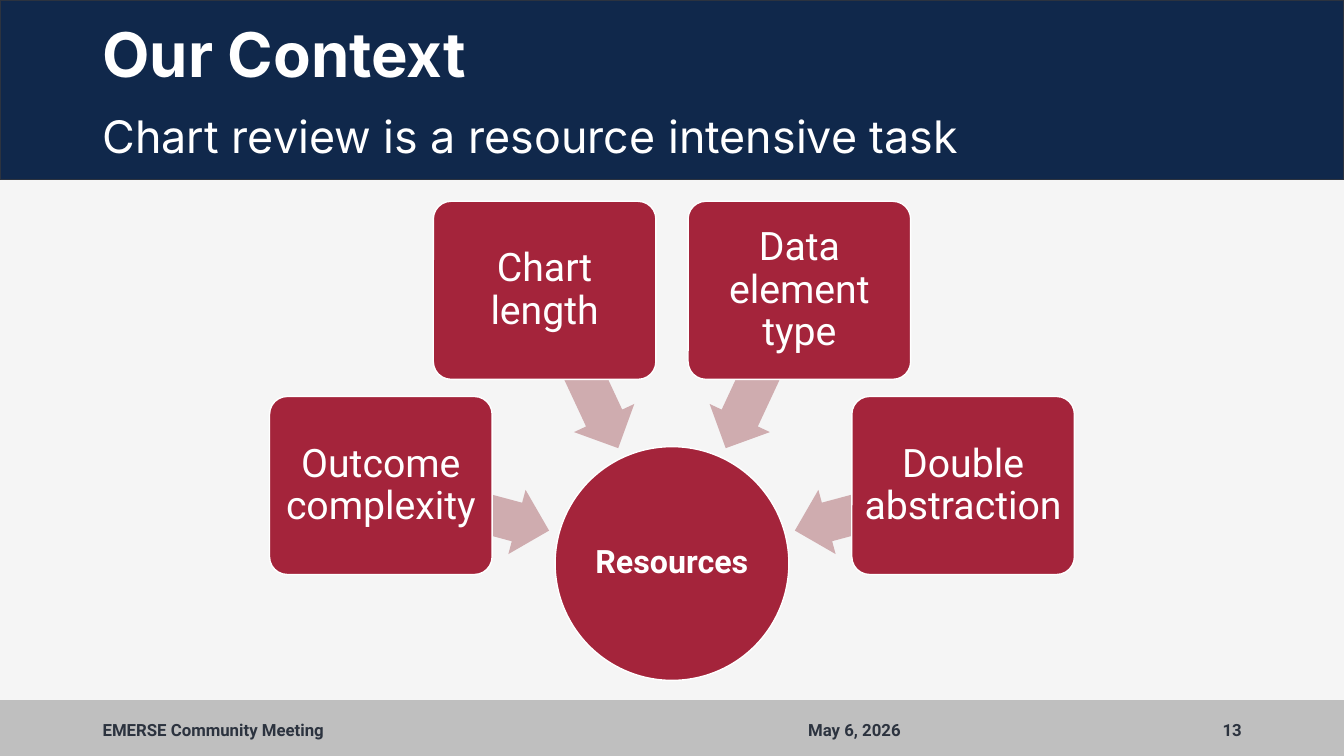
import math
from pptx import Presentation, util as u
from pptx.dml.color import RGBColor
from pptx.enum import shapes, text

NAVY, RED, PINK, GREY = "10284B", "A4243B", "CFACAF", "BFBFBF"
PAPER, INK, WHITE = "F5F5F5", "2C333F", "FFFFFF"
WIDTH, HEIGHT = 960, 540
BANDS = [(500.4, 39.6, GREY, GREY), (0, 128.2, NAVY, INK)]
HEADINGS = [
    ("Our Context", 10.8, 61.2, 44, True, text.MSO_ANCHOR.MIDDLE),
    ("Chart review is a resource intensive task", 78.5, 45.4, 32, False, text.MSO_ANCHOR.TOP),
]
FOOTERS = [
    ("EMERSE Community Meeting", 66.2, 494, text.PP_ALIGN.LEFT),
    ("May 6, 2026", 570.2, 198.7, text.PP_ALIGN.LEFT),
    ("13", 779, 115.2, text.PP_ALIGN.RIGHT),
]
HUB = "Resources"
FACTORS = ["Outcome complexity", "Chart length", "Data element type", "Double abstraction"]
CENTER_X, CENTER_Y, HUB_SIZE = 480, 402.5, 167
FIRST_ANGLE, ANGLE_STEP = 195, 50
BOX_RADIUS, BOX_SIZE = 215.3, (159, 127.2)
ARROW_RADIUS, ARROW_SIZE = 153.2, (124.6, 47.5)


def color(value):
    return RGBColor.from_string(value)


def write(box, words, font, size, ink, bold=False, align=text.PP_ALIGN.LEFT,
          anchor=text.MSO_ANCHOR.MIDDLE, spacing=1.0, inset=None):
    frame = box.text_frame
    frame.word_wrap = True
    frame.vertical_anchor = anchor
    if inset is not None:
        frame.margin_left = frame.margin_right = u.Pt(inset)
        frame.margin_top = frame.margin_bottom = u.Pt(inset)
    para = frame.paragraphs[0]
    para.text = words
    para.alignment = align
    para.line_spacing = spacing
    para.font.name = font
    para.font.size = u.Pt(size)
    para.font.bold = bold
    para.font.color.rgb = color(ink)


def add_shape(page, kind, left, top, width, height, fill, line=None):
    shape = page.shapes.add_shape(kind, u.Pt(left), u.Pt(top), u.Pt(width), u.Pt(height))
    shape.shadow.inherit = False
    shape.fill.solid()
    shape.fill.fore_color.rgb = color(fill)
    if line:
        shape.line.color.rgb = color(line)
        shape.line.width = u.Pt(1)
    else:
        shape.line.fill.background()
    return shape


def add_around(page, kind, angle, radius, size, fill, line=None):
    turn = math.radians(angle)
    left = CENTER_X + radius * math.cos(turn) - size[0] / 2
    top = CENTER_Y + radius * math.sin(turn) - size[1] / 2
    return add_shape(page, kind, left, top, *size, fill, line)


def add_text(page, left, top, width, height, *words, **style):
    box = page.shapes.add_textbox(u.Pt(left), u.Pt(top), u.Pt(width), u.Pt(height))
    write(box, *words, **style)


def add_diagram(page):
    kinds = shapes.MSO_SHAPE
    centered = dict(align=text.PP_ALIGN.CENTER, spacing=0.9)
    hub = add_around(page, kinds.OVAL, 0, 0, (HUB_SIZE, HUB_SIZE), RED, WHITE)
    write(hub, HUB, "Roboto", 23, WHITE, bold=True, inset=1.4, **centered)
    for index, factor in enumerate(FACTORS):
        angle = FIRST_ANGLE + index * ANGLE_STEP
        arrow = add_around(page, kinds.LEFT_ARROW, angle, ARROW_RADIUS, ARROW_SIZE, PINK)
        arrow.rotation = angle
        arrow.adjustments[0] = 0.6
        arrow.adjustments[1] = 0.5
        box = add_around(page, kinds.ROUNDED_RECTANGLE, angle, BOX_RADIUS, BOX_SIZE, RED, WHITE)
        box.adjustments[0] = 0.1
        write(box, factor, "Roboto", 28, WHITE, inset=4.2, **centered)


def main():
    deck = Presentation()
    deck.slide_width, deck.slide_height = u.Pt(WIDTH), u.Pt(HEIGHT)
    page = deck.slides.add_slide(deck.slide_layouts[6])
    page.background.fill.solid()
    page.background.fill.fore_color.rgb = color(PAPER)
    for top, height, fill, line in BANDS:
        add_shape(page, shapes.MSO_SHAPE.RECTANGLE, 0, top, WIDTH, height, fill, line)
    for words, left, width, align in FOOTERS:
        add_text(page, left, 507, width, 28.8, words, "Roboto", 12, INK, bold=True, align=align)
    add_diagram(page)
    for words, top, height, size, bold, anchor in HEADINGS:
        add_text(page, 66.2, top, 828, height, words, "Inter", size, WHITE,
                 bold=bold, anchor=anchor, spacing=0.9)
    deck.save("out.pptx")


if __name__ == "__main__":
    main()
